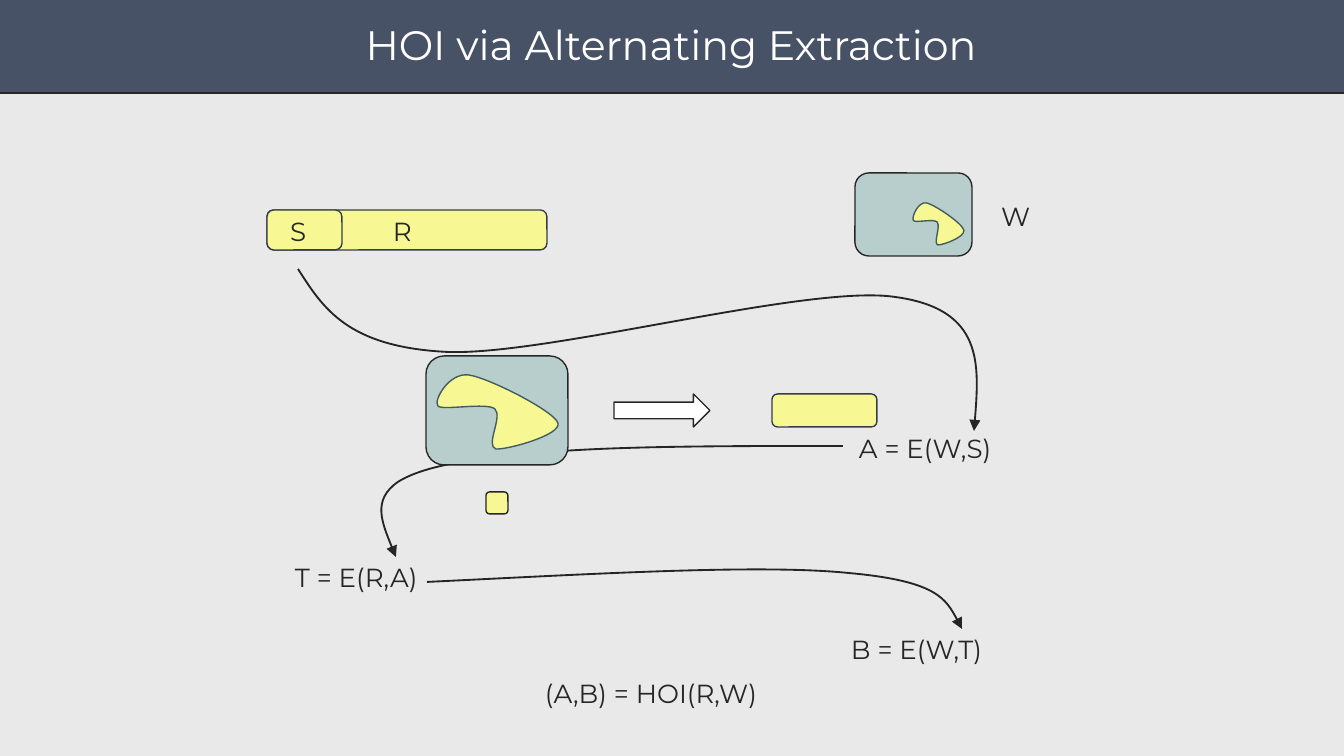
from pptx import Presentation
from pptx import util as u
from pptx.dml.color import RGBColor
from pptx.enum import shapes, text
from pptx.oxml import ns
from lxml import etree

PX = 914400 / 134.4  # EMU in one px
THEME = {
    "font": "Montserrat", "title_size": 22, "label_size": 14,
    "back": "E9E9E9", "band": "485267", "white": "FFFFFF", "ink": "262626",
    "arrow": "252525", "seed": "F7F793", "seed_line": "353D4C",
    "source": "B8CECD", "blob_line": "405D5C",
}

# Content: boxes are left, top, width, height in px
TITLE = ("HOI via Alternating Extraction", (56, 8, 1230, 73))
BAND = (-34, -13, 1400, 106)
LABEL_H = 51
LABELS = [  # text, left, top, width
    ("S", 280, 210, 43),
    ("R", 383, 210, 43),
    ("W", 991, 195, 43),
    ("A = E(W,S)", 849, 427, 192),
    ("T = E(R,A)", 285, 556, 185),
    ("B = E(W,T)", 841, 628, 167),
    ("(A,B) = HOI(R,W)", 535, 672, 271),
]
SEEDS = [  # box, line colour
    ((267, 210, 280, 40), "seed_line"),
    ((267, 210, 75, 40), "seed_line"),
    ((772, 394, 105, 33), "seed_line"),
    ((486, 492, 22, 22), "ink"),
]
BLOCK_ARROW = (614, 394, 96, 33)
SOURCES = [  # card box, blob box
    ((855, 173, 117, 83), (913, 203, 51, 42)),
    ((426, 356, 142, 109), (437, 375, 121, 74)),
]
# Bezier paths: a start, then two control points and an end for each segment
BLOB_SIZE = (121, 74)
BLOB = [(1, 31), (-4, 26), (12, -3), (32, 0), (52, 3), (117, 36), (121, 48),
        (125, 60), (70, 75), (59, 74), (48, 71), (66, 42), (58, 34),
        (50, 27), (5, 36), (1, 31)]
FLOWS = [
    [(298, 269), (323, 308), (347, 347), (447, 352), (547, 356), (808, 284),
     (895, 297), (984, 309), (979, 371), (974, 431)],
    [(843, 446), (734, 446), (624, 446), (550, 452), (476, 458), (425, 465),
     (398, 482), (372, 500), (384, 528), (396, 557)],
    [(427, 582), (593, 574), (759, 564), (848, 573), (938, 581), (950, 605),
     (962, 629)],
]


def emu(values):
    return [round(v * PX) for v in values]


def color(name):
    return RGBColor.from_string(THEME[name])


def paint(sp, fill, line, width=0.75):
    sp.shadow.inherit = False
    if fill:
        sp.fill.solid()
        sp.fill.fore_color.rgb = color(fill)
    else:
        sp.fill.background()
    sp.line.color.rgb = color(line)
    sp.line.width = u.Pt(width)
    return sp


def add_box(parent, kind, box, fill, line, width=0.75):
    return paint(parent.add_shape(kind, *emu(box)), fill, line, width)


def bezier(p, t):
    weights = ((1 - t) ** 3, 3 * t * (1 - t) ** 2, 3 * t * t * (1 - t), t ** 3)
    return tuple(sum(w * c for w, c in zip(weights, axis)) for axis in zip(*p))


def add_curve(parent, points, closed):
    """A freeform sized by points on the curve, then given true Bezier segments."""
    segments = [points[i:i + 4] for i in range(0, len(points) - 1, 3)]
    fb = parent.build_freeform(*emu(points[0]))
    fb.add_line_segments([tuple(emu(bezier(s, k / 20)))
                          for s in segments for k in range(1, 21)], close=closed)
    sp = fb.convert_to_shape()
    outline = next(sp._element.iter(ns.qn("a:path")))
    for line in outline.findall(ns.qn("a:lnTo")):
        outline.remove(line)
    for n, s in enumerate(segments, 1):
        curve = etree.Element(ns.qn("a:cubicBezTo"))
        for point in s[1:]:
            x, y = emu(point)
            etree.SubElement(curve, ns.qn("a:pt"),
                             x=str(x - sp.left), y=str(y - sp.top))
        outline.insert(n, curve)
    return sp


def write(sp, words, size, ink, align, anchor, margins):
    tf = sp.text_frame
    tf.text = words
    tf.word_wrap = True
    tf.auto_size = text.MSO_AUTO_SIZE.NONE
    tf.vertical_anchor = anchor
    tf.margin_left = tf.margin_right = emu(margins)[0]
    tf.margin_top = tf.margin_bottom = emu(margins)[1]
    p = tf.paragraphs[0]
    p.alignment = align
    font = p.runs[0].font
    font.name, font.size = THEME["font"], u.Pt(THEME[size])
    font.color.rgb = color(ink)
    return p


prs = Presentation()
prs.slide_width, prs.slide_height = emu((1344, 756))
s = prs.slides.add_slide(prs.slide_layouts[5])
s.background.fill.solid()
s.background.fill.fore_color.rgb = color("back")
SHAPE = shapes.MSO_SHAPE

# Title band, with the title kept in front of it
add_box(s.shapes, SHAPE.RECTANGLE, BAND, "band", "ink", 1.5)
title = s.shapes.title
title.left, title.top, title.width, title.height = emu(TITLE[1])
write(title, TITLE[0], "title_size", "white", text.PP_ALIGN.CENTER,
      text.MSO_ANCHOR.MIDDLE, (0, 0))
s.shapes._spTree.append(title._element)

# Flow curves, behind the cards
for points in FLOWS:
    sp = paint(add_curve(s.shapes, points, False), None, "arrow", 1)
    etree.SubElement(sp.line._get_or_add_ln(), ns.qn("a:tailEnd"), type="triangle")

# Seeds and block arrow
for box, line in SEEDS:
    add_box(s.shapes, SHAPE.ROUNDED_RECTANGLE, box, "seed", line)
add_box(s.shapes, SHAPE.RIGHT_ARROW, BLOCK_ARROW, "white", "ink")

# Sources: a card with a blob stretched to its own box
for card, (left, top, width, height) in SOURCES:
    group = s.shapes.add_group_shape().shapes
    add_box(group, SHAPE.ROUNDED_RECTANGLE, card, "source", "ink")
    points = [(left + x * width / BLOB_SIZE[0], top + y * height / BLOB_SIZE[1])
              for x, y in BLOB]
    paint(add_curve(group, points, True), "seed", "blob_line")

# Labels
for words, left, top, width in LABELS:
    sp = s.shapes.add_textbox(*emu((left, top, width, LABEL_H)))
    p = write(sp, words, "label_size", "ink", text.PP_ALIGN.JUSTIFY,
              text.MSO_ANCHOR.TOP, (10, 5))
    p.space_before = u.Pt(2.8)

prs.save("out.pptx")
